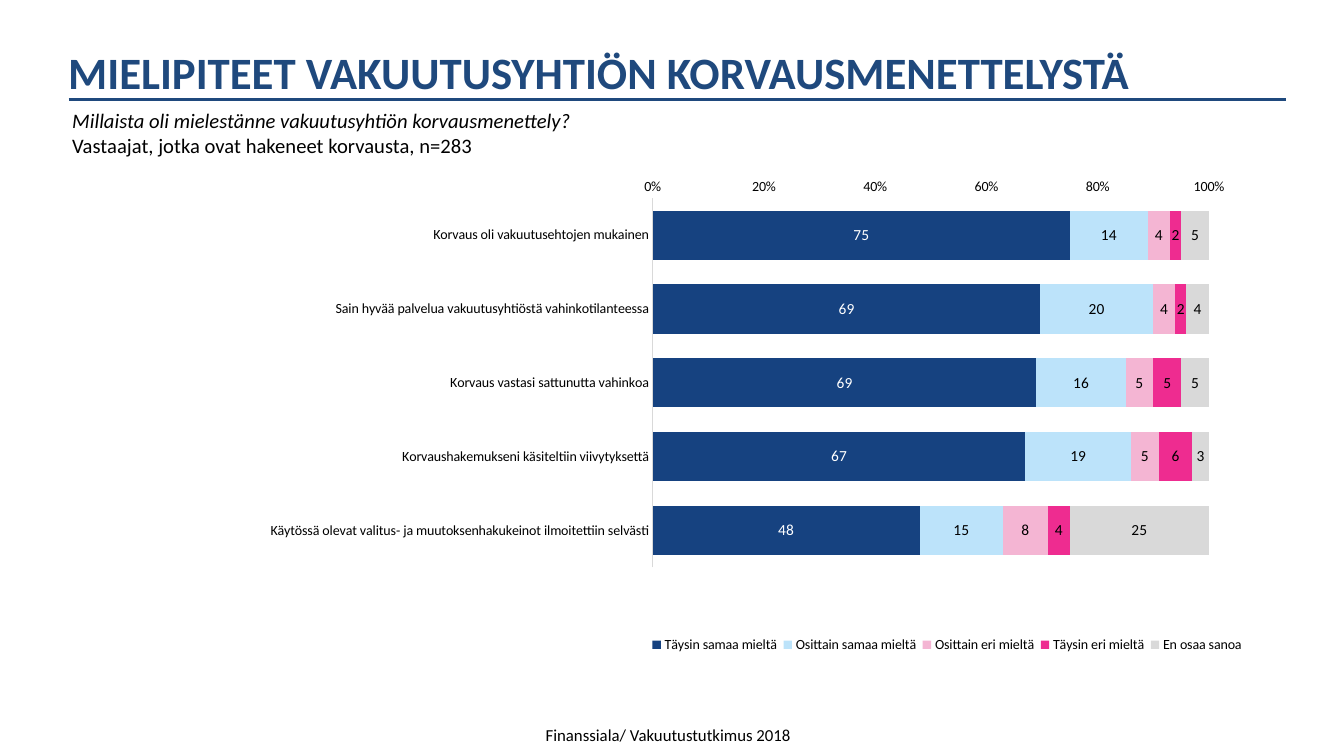
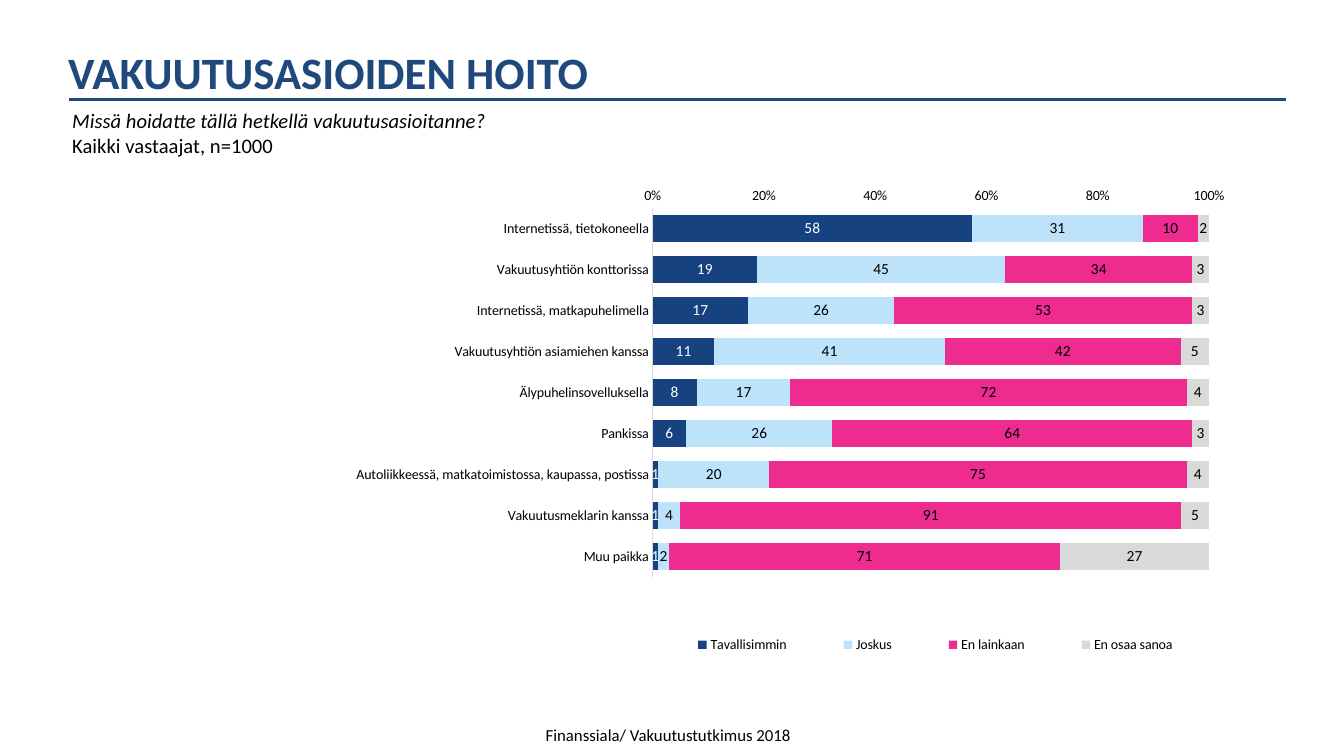
from dataclasses import dataclass

from lxml.etree import SubElement
from pptx import Presentation
from pptx.chart.data import CategoryChartData as ChartData
from pptx.dml.color import RGBColor as RGB
from pptx.enum.chart import XL_AXIS_CROSSES as Crosses
from pptx.enum.chart import XL_CHART_TYPE as ChartType
from pptx.enum.chart import XL_LEGEND_POSITION as LegendPos
from pptx.enum.chart import XL_TICK_MARK as Tick
from pptx.enum.shapes import MSO_CONNECTOR as Connector
from pptx.enum.text import MSO_AUTO_SIZE as AutoSize
from pptx.oxml import parse_xml
from pptx.oxml.ns import nsdecls, qn
from pptx.util import Cm, Pt


@dataclass(frozen=True)
class Theme:
    font: str = "Calibri"
    title_color: str = "1F497D"
    text: str = "000000"
    white: str = "FFFFFF"
    axis: str = "D9D9D9"
    navy: str = "164280"
    sky: str = "BCE3FA"
    rose: str = "F4B5D3"
    pink: str = "EE2C90"
    grey: str = "D9D9D9"
    title_size: float = 32
    question_size: float = 14.7
    footer_size: float = 12
    label_size: float = 11
    chart_size: float = 10
    rule_width: float = 2.25
    axis_width: float = 0.75


T = Theme()
FOOTER = "Finanssiala/ Vakuutustutkimus 2018"


class Deck:
    def __init__(self):
        self.prs = Presentation()
        self.prs.slide_width, self.prs.slide_height = Cm(33.87), Cm(19.05)
        self.s = None

    def style(self, font, size, color=T.text, bold=False, italic=False):
        font.name, font.size = T.font, Pt(size)
        font.bold, font.italic = bold, italic
        font.color.rgb = RGB.from_string(color)

    def text(self, box, text, size, color=T.text, bold=False, wrap=True):
        sp = self.s.shapes.add_textbox(*map(Cm, box))
        tf = sp.text_frame
        tf.text = text
        tf.word_wrap = wrap
        tf.auto_size = AutoSize.SHAPE_TO_FIT_TEXT
        for p in tf.paragraphs:
            for r in p.runs:
                self.style(r.font, size, color, bold)
        return tf

    def rule(self):
        y = Cm(2.51)
        line = self.s.shapes.add_connector(Connector.STRAIGHT, Cm(1.73), y, Cm(32.41), y)
        line.line.color.rgb = RGB.from_string(T.title_color)
        line.line.width = Pt(T.rule_width)
        SubElement(line.element.spPr, qn("a:effectLst"))

    def footer(self):
        tf = self.text((13.34, 18.06, 7.06, 0.91), FOOTER, T.footer_size, wrap=False)
        tf.margin_left = tf.margin_right = Cm(0.41)
        tf.margin_top = tf.margin_bottom = Cm(0.2)

    def slide(self, title, question, base):
        self.s = self.prs.slides.add_slide(self.prs.slide_layouts[6])
        self.text((1.47, 0.99, 30.12, 1.63), title, T.title_size, T.title_color, bold=True)
        tf = self.text((1.57, 2.59, 30.81, 1.5), f"{question}\n{base}", T.question_size)
        tf.paragraphs[0].runs[0].font.italic = True
        self.rule()
        self.footer()

    def place(self, parent, index, x, y, w, h, inner=False):
        for old in parent.findall(qn("c:layout")):
            parent.remove(old)
        target = '<c:layoutTarget val="inner"/>' if inner else ""
        modes = '<c:xMode val="edge"/><c:yMode val="edge"/>'
        sizes = "".join(f'<c:{k} val="{v}"/>' for k, v in zip("xywh", (x, y, w, h)))
        parent.insert(index, parse_xml(
            f'<c:layout {nsdecls("c")}><c:manualLayout>'
            f"{target}{modes}{sizes}</c:manualLayout></c:layout>"))

    def axes(self, chart):
        cat, val = chart.category_axis, chart.value_axis
        for axis in (cat, val):
            axis.major_tick_mark = axis.minor_tick_mark = Tick.NONE
            axis.has_major_gridlines = False
            self.style(axis.tick_labels.font, T.chart_size)
        cat.reverse_order = True
        cat.crosses = Crosses.MAXIMUM
        cat.format.line.color.rgb = RGB.from_string(T.axis)
        cat.format.line.width = Pt(T.axis_width)
        val.minimum_scale, val.maximum_scale, val.major_unit = 0, 1, 0.2
        val.tick_labels.number_format = "0%"
        val.tick_labels.number_format_is_linked = False
        val.format.line.fill.background()

    def chart(self, rows, series, plot_top, legend_width):
        data = ChartData()
        data.categories = [name for name, *_ in rows]
        columns = list(zip(*(values for _, *values in rows)))
        for (name, _), values in zip(series, columns):
            data.add_series(name, values)
        chart = self.s.shapes.add_chart(
            ChartType.BAR_STACKED_100, Cm(2.34), Cm(4.5), Cm(29.21), Cm(12.4), data).chart
        chart.has_title = False
        self.style(chart.font, T.chart_size)
        self.axes(chart)
        plot = chart.plots[0]
        plot.gap_width, plot.overlap = 50, 100
        plot.vary_by_categories = False
        for ser, (_, color) in zip(plot.series, series):
            ser.format.fill.solid()
            ser.format.fill.fore_color.rgb = RGB.from_string(color)
            labels = ser.data_labels
            labels.show_value = True
            self.style(labels.font, T.label_size, T.white if color == T.navy else T.text)
        chart.has_legend = True
        chart.legend.position = LegendPos.BOTTOM
        chart.legend.include_in_layout = False
        self.style(chart.legend.font, T.chart_size)
        root = chart.element.find(qn("c:chart"))
        self.place(root.find(qn("c:plotArea")), 0, 0.483, plot_top, 0.48, 0.75, inner=True)
        self.place(root.find(qn("c:legend")), 1, 0.477, 0.92, legend_width, 0.055)


def main():
    deck = Deck()
    deck.slide("MIELIPITEET VAKUUTUSYHTIÖN KORVAUSMENETTELYSTÄ",
               "Millaista oli mielestänne vakuutusyhtiön korvausmenettely?",
               "Vastaajat, jotka ovat hakeneet korvausta, n=283")
    deck.chart(
        [("Korvaus oli vakuutusehtojen mukainen", 75, 14, 4, 2, 5),
         ("Sain hyvää palvelua vakuutusyhtiöstä vahinkotilanteessa", 69, 20, 4, 2, 4),
         ("Korvaus vastasi sattunutta vahinkoa", 69, 16, 5, 5, 5),
         ("Korvaushakemukseni käsiteltiin viivytyksettä", 67, 19, 5, 6, 3),
         ("Käytössä olevat valitus- ja muutoksenhakukeinot ilmoitettiin selvästi",
          48, 15, 8, 4, 25)],
        [("Täysin samaa mieltä", T.navy), ("Osittain samaa mieltä", T.sky),
         ("Osittain eri mieltä", T.rose), ("Täysin eri mieltä", T.pink),
         ("En osaa sanoa", T.grey)],
        plot_top=0.04, legend_width=0.52)

    deck.slide("VAKUUTUSASIOIDEN HOITO",
               "Missä hoidatte tällä hetkellä vakuutusasioitanne?",
               "Kaikki vastaajat, n=1000")
    deck.chart(
        [("Internetissä, tietokoneella", 58, 31, 10, 2),
         ("Vakuutusyhtiön konttorissa", 19, 45, 34, 3),
         ("Internetissä, matkapuhelimella", 17, 26, 53, 3),
         ("Vakuutusyhtiön asiamiehen kanssa", 11, 41, 42, 5),
         ("Älypuhelinsovelluksella", 8, 17, 72, 4),
         ("Pankissa", 6, 26, 64, 3),
         ("Autoliikkeessä, matkatoimistossa, kaupassa, postissa", 1, 20, 75, 4),
         ("Vakuutusmeklarin kanssa", 1, 4, 91, 5),
         ("Muu paikka", 1, 2, 71, 27)],
        [("Tavallisimmin", T.navy), ("Joskus", T.sky),
         ("En lainkaan", T.pink), ("En osaa sanoa", T.grey)],
        plot_top=0.06, legend_width=0.5)
    deck.prs.save("out.pptx")


if __name__ == "__main__":
    main()
